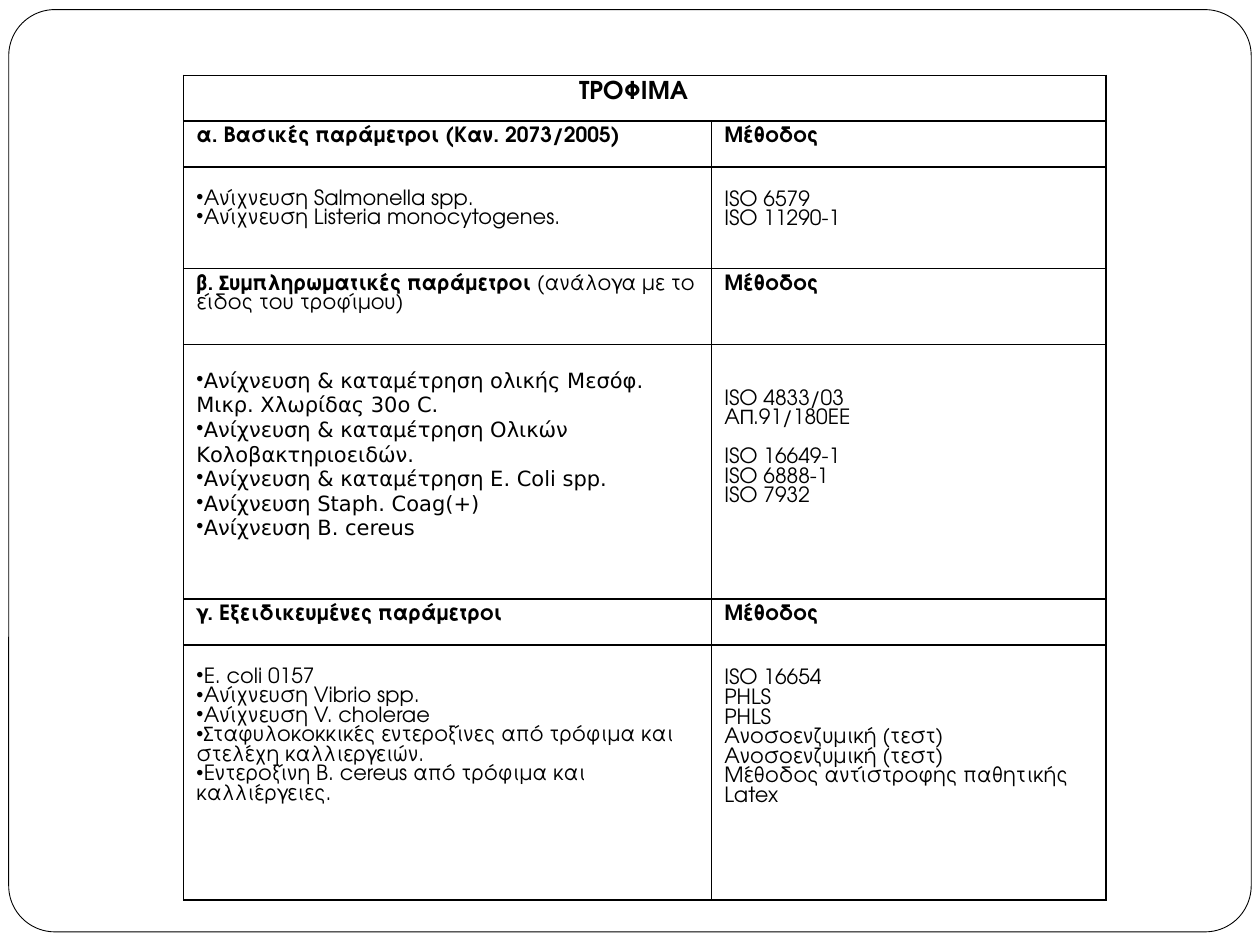
from lxml import etree
from pptx import Presentation
from pptx.dml.color import RGBColor
from pptx.enum import shapes, text
from pptx.oxml import ns
from pptx.util import Pt

COLORS = {"paper": "FFFFFF", "ink": "000000"}
HEADING_FONT, PLAIN_FONT = "TeX Gyre Adventor", "DejaVu Sans"
COLUMN_WIDTHS = (301.7, 225.3)
METHOD = "Μέθοδος"
LINE = 11.1

SECTIONS = [
    {"heading": ("α. Βασικές παράμετροι (Καν. 2073/2005)", ""),
     "heights": (26.2, 58), "tops": (13, 13.6), "font": HEADING_FONT,
     "tests": ["Ανίχνευση Salmonella spp.", "Ανίχνευση Listeria monocytogenes."],
     "methods": ["ISO 6579", "ISO 11290-1"]},
    {"heading": ("β. Συμπληρωματικές παράμετροι", " (ανάλογα με το είδος του τροφίμου)"),
     "heights": (43.4, 145.6), "tops": (14, 25.8), "font": PLAIN_FONT,
     "tests": ["Ανίχνευση & καταμέτρηση ολικής Μεσόφ. Μικρ. Χλωρίδας 30ο C.",
               "Ανίχνευση & καταμέτρηση Ολικών Κολοβακτηριοειδών.",
               "Ανίχνευση & καταμέτρηση E. Coli spp.",
               "Aνίχνευση Staph. Coag(+)", "Ανίχνευση B. cereus"],
     "methods": ["ISO 4833/03", "ΑΠ.91/180ΕΕ", "ISO 16649-1", "ISO 6888-1", "ISO 7932"],
     "gap_before": 2},
    {"heading": ("γ. Εξειδικευμένες παράμετροι", ""),
     "heights": (26.2, 145.6), "tops": (13, 14), "font": HEADING_FONT,
     "tests": ["E. coli 0157", "Ανίχνευση Vibrio spp.", "Ανίχνευση V. cholerae",
               "Σταφυλοκοκκικές εντεροξίνες από τρόφιμα και στελέχη καλλιεργειών.",
               "Εντεροξίνη B. cereus από τρόφιμα και καλλιέργειες."],
     "methods": ["ISO 16654", "PHLS", "PHLS", "Ανοσοενζυμική (τεστ)",
                 "Ανοσοενζυμική (τεστ)", "Μέθοδος αντίστροφης παθητικής Latex"]},
]


def color(name):
    return RGBColor.from_string(COLORS[name])


def format_run(run, font=HEADING_FONT, size=12, bold=False):
    run.font.name = font
    run.font.size = Pt(size)
    run.font.bold = bold
    run.font.color.rgb = color("ink")


def add_bullet(paragraph):
    properties = paragraph._p.get_or_add_pPr()
    properties.set("marL", "0")
    properties.set("indent", "0")
    etree.SubElement(properties, ns.qn("a:buChar"), char="•")


def style_cell(cell):
    cell.fill.background()
    properties = cell._tc.get_or_add_tcPr()
    for position, side in enumerate(("lnL", "lnR", "lnT", "lnB")):
        border = etree.Element(ns.qn("a:" + side), w=str(Pt(1)))
        fill = etree.SubElement(border, ns.qn("a:solidFill"))
        etree.SubElement(fill, ns.qn("a:srgbClr"), val=COLORS["ink"])
        properties.insert(position, border)


def write_heading(cell, bold_part, plain_part=""):
    paragraph = cell.text_frame.paragraphs[0]
    paragraph.text = bold_part
    format_run(paragraph.runs[0], bold=True)
    if plain_part:
        note = paragraph.add_run()
        note.text = plain_part
        format_run(note)


def write_lines(cell, lines, top, font=HEADING_FONT, bulleted=False, gap_before=None):
    cell.margin_top = Pt(top)
    cell.text_frame.text = "\n".join(lines)
    for index, paragraph in enumerate(cell.text_frame.paragraphs):
        format_run(paragraph.runs[0], font)
        if index == gap_before:
            paragraph.space_before = Pt(LINE)
        if bulleted:
            add_bullet(paragraph)


def add_frame(slide, left, top, width, height):
    frame = slide.shapes.add_shape(shapes.MSO_SHAPE.ROUNDED_RECTANGLE,
                                   Pt(left), Pt(top), Pt(width), Pt(height))
    frame.adjustments[0] = 0.05
    frame.shadow.inherit = False
    frame.fill.solid()
    frame.fill.fore_color.rgb = color("paper")
    frame.line.color.rgb = color("ink")
    frame.line.width = Pt(0.5)


def add_food_table(slide, left, top, title_height):
    heights = [title_height] + [h for section in SECTIONS for h in section["heights"]]
    table = slide.shapes.add_table(len(heights), len(COLUMN_WIDTHS), Pt(left), Pt(top),
                                   Pt(sum(COLUMN_WIDTHS)), Pt(sum(heights))).table
    table.first_row = table.horz_banding = False
    for column, width in zip(table.columns, COLUMN_WIDTHS):
        column.width = Pt(width)
    for row, height in zip(table.rows, heights):
        row.height = Pt(height)
    for cell in table.iter_cells():
        style_cell(cell)

    title = table.cell(0, 0)
    title.merge(table.cell(0, 1))
    title.margin_right = Pt(20)
    title.text_frame.text = "ΤΡΟΦΙΜΑ"
    title.text_frame.paragraphs[0].alignment = text.PP_ALIGN.CENTER
    format_run(title.text_frame.paragraphs[0].runs[0], size=14, bold=True)

    for index, section in enumerate(SECTIONS):
        row = 1 + 2 * index
        tests_top, methods_top = section["tops"]
        write_heading(table.cell(row, 0), *section["heading"])
        write_heading(table.cell(row, 1), METHOD)
        write_lines(table.cell(row + 1, 0), section["tests"], tests_top,
                    section["font"], bulleted=True)
        write_lines(table.cell(row + 1, 1), section["methods"], methods_top,
                    gap_before=section.get("gap_before"))


def main():
    deck = Presentation()
    deck.slide_width, deck.slide_height = Pt(720), Pt(540)
    slide = deck.slides.add_slide(deck.slide_layouts[6])
    add_frame(slide, 5, 5.5, 710, 527)
    add_food_table(slide, 105, 43, 26.2)
    deck.save("out.pptx")


if __name__ == "__main__":
    main()
